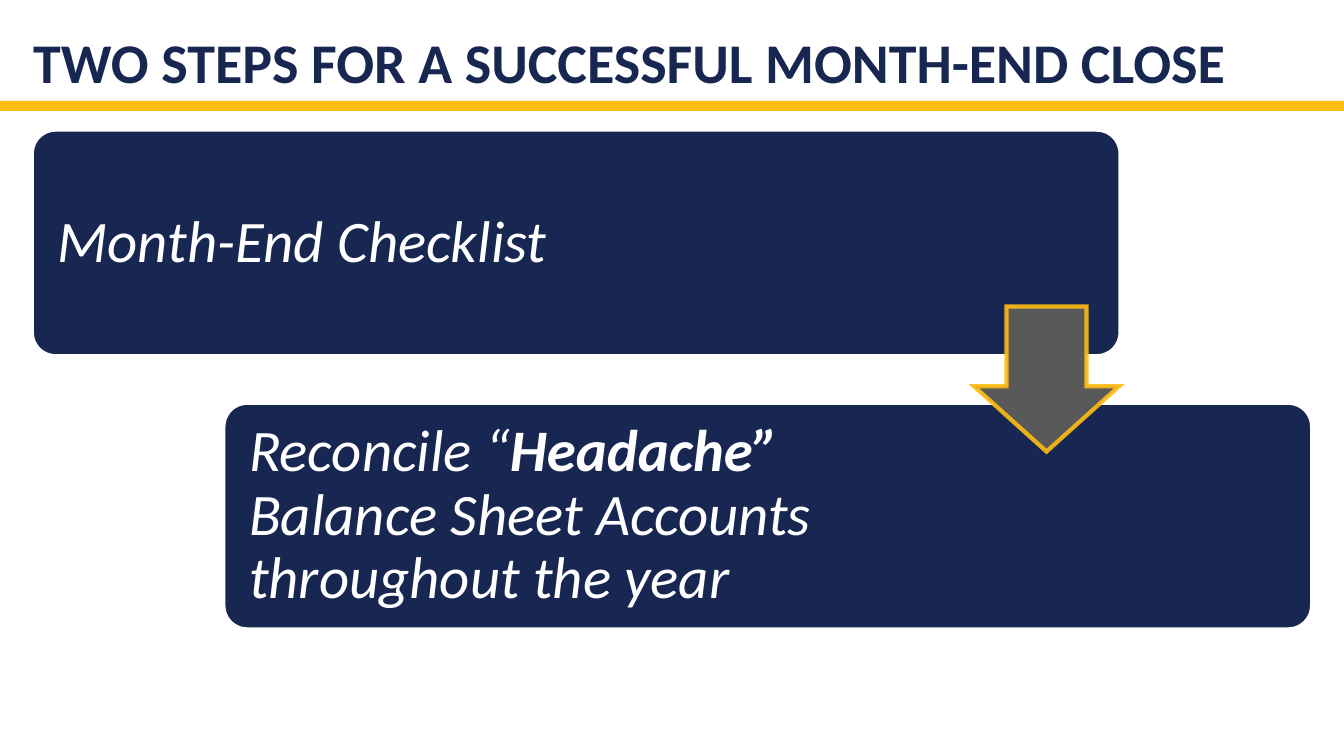
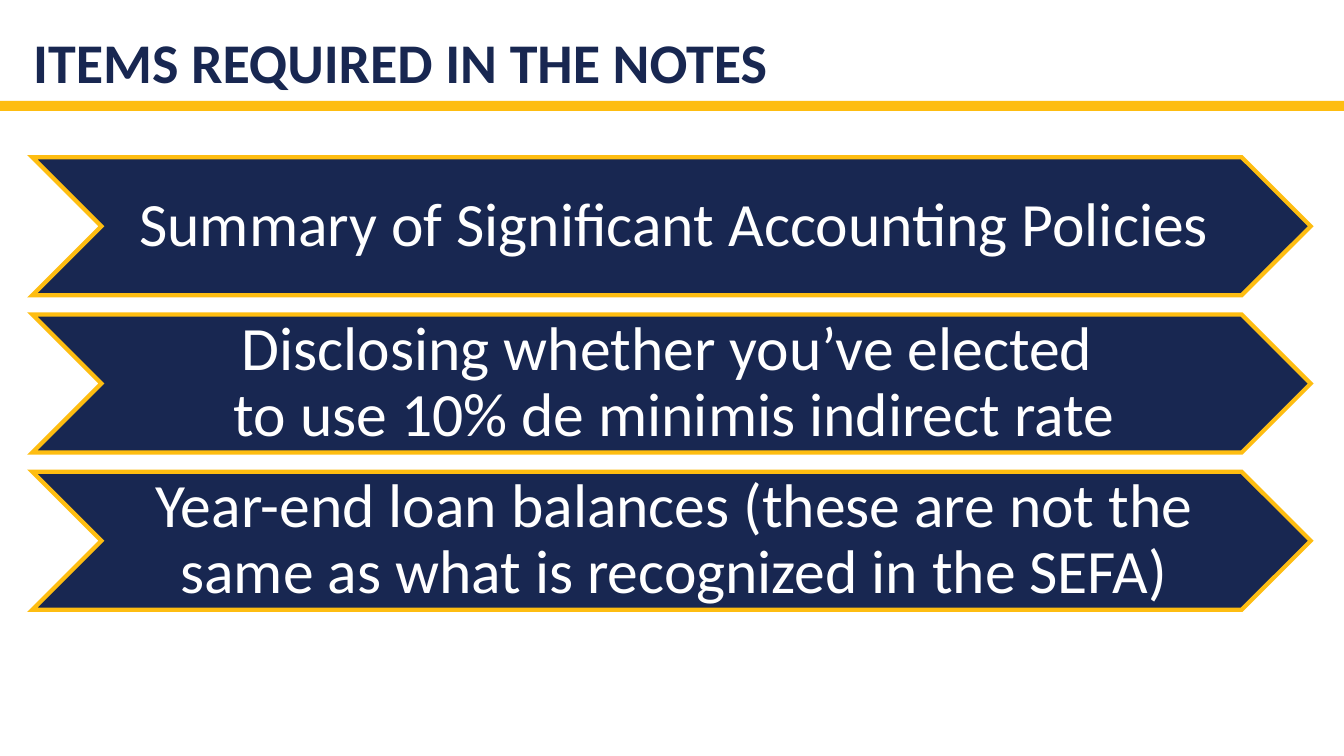
from dataclasses import dataclass

from lxml import etree
from pptx import Presentation
from pptx.dml.color import RGBColor
from pptx.enum import shapes, text
from pptx.oxml import ns
from pptx.util import Inches, Pt


@dataclass(frozen=True)
class Theme:
    navy: RGBColor = RGBColor.from_string("182751")
    gold: RGBColor = RGBColor.from_string("FEBD11")
    gray: RGBColor = RGBColor.from_string("595959")
    white: RGBColor = RGBColor.from_string("FFFFFF")
    font: str = "Calibri"
    title: int = 40
    step: int = 42
    item: int = 44


T = Theme()
SHAPE = shapes.MSO_SHAPE
ANCHOR = text.MSO_ANCHOR
ALIGN = text.PP_ALIGN
WIDTH, HEIGHT = 13.33, 7.5
MARGIN = 0.33

# Content: each step is a list of (words, bold) runs with its text width
STEPS_TITLE = "TWO STEPS FOR A SUCCESSFUL MONTH-END CLOSE"
STEPS = [
    ([("Month-End Checklist", False)], 8.48),
    ([("Reconcile “", False), ("Headache”", True),
      (" Balance Sheet Accounts throughout the year", False)], 7.3),
]
NOTES_TITLE = "ITEMS REQUIRED IN THE NOTES"
NOTES = [
    "Summary of Significant Accounting Policies",
    "Disclosing whether you’ve elected \vto use 10% de minimis indirect rate",
    "Year-end loan balances (these are not the same as what is recognized in the SEFA)",
]


# Shared parts
def add_block(s, kind, box, fill, line=None, weight=1, alpha=None):
    sp = s.shapes.add_shape(kind, *map(Inches, box))
    sp.shadow.inherit = False
    sp.fill.solid()
    sp.fill.fore_color.rgb = fill
    if line is None:
        sp.line.fill.background()
        return sp
    sp.line.color.rgb = line
    sp.line.width = Pt(weight)
    ln = sp.line._get_or_add_ln()
    if alpha:
        color = ln.find(".//" + ns.qn("a:srgbClr"))
        etree.SubElement(color, ns.qn("a:alpha"), val=str(alpha * 1000))
    etree.SubElement(ln, ns.qn("a:miter"), lim="800000")
    return sp


def add_text(s, box, runs, size, color, insets, anchor=ANCHOR.MIDDLE,
             align=ALIGN.LEFT, bold=None, italic=None):
    tf = s.shapes.add_textbox(*map(Inches, box)).text_frame
    tf.word_wrap = True
    tf.vertical_anchor = anchor
    (tf.margin_left, tf.margin_top,
     tf.margin_right, tf.margin_bottom) = map(Inches, insets)
    p = tf.paragraphs[0]
    p.alignment = align
    p.line_spacing = 0.9
    if isinstance(runs, str):
        p.text = runs
    else:
        for words, strong in runs:
            r = p.add_run()
            r.text = words
            r.font.bold = strong
    p.font.name = T.font
    p.font.size = Pt(size)
    p.font.color.rgb = color
    p.font.bold = bold
    p.font.italic = italic


def add_slide(prs, title):
    s = prs.slides.add_slide(prs.slide_layouts[6])
    add_block(s, SHAPE.RECTANGLE, (0, 1, WIDTH, 0.1), T.gold)
    add_text(s, (MARGIN, 0, WIDTH - 2 * MARGIN, 1), title, T.title, T.navy,
             (0, 0.05, 0, 0.05), anchor=ANCHOR.BOTTOM, bold=True)
    return s


# Slide 1: staggered steps joined by an arrow
def build_steps(prs):
    s = add_slide(prs, STEPS_TITLE)
    top, width, height = 1.3, 10.77, 2.22
    shift_x, shift_y, pad = 1.9, 2.71, 0.07
    for i, (runs, text_width) in enumerate(STEPS):
        x, y = MARGIN + i * shift_x, top + i * shift_y
        card = add_block(s, SHAPE.ROUNDED_RECTANGLE, (x, y, width, height),
                         T.navy, T.white)
        card.adjustments[0] = 0.1
        add_text(s, (x + pad, y + pad, text_width, height - 2 * pad), runs,
                 T.step, T.white, (0.17,) * 4, italic=True)
    side = 1.44
    arrow = add_block(s, SHAPE.DOWN_ARROW,
                      (MARGIN + width - side, 3.04, side, side),
                      T.gray, T.gold, 3, alpha=90)
    arrow.adjustments[0] = 0.55
    arrow.adjustments[1] = 0.45


# Slide 2: stacked chevrons
def build_notes(prs):
    s = add_slide(prs, NOTES_TITLE)
    left, top, width, height, pitch = 0.32, 1.56, 12.68, 1.37, 1.56
    notch = height / 2
    for i, note in enumerate(NOTES):
        y = top + i * pitch
        add_block(s, SHAPE.CHEVRON, (left, y, width, height), T.navy, T.gold, 3)
        add_text(s, (left + notch, y, width - 2 * notch, height), note,
                 T.item, T.white, (0.06, 0.03, 0, 0.03), align=ALIGN.CENTER)


def main():
    prs = Presentation()
    prs.slide_width, prs.slide_height = Inches(WIDTH), Inches(HEIGHT)
    build_steps(prs)
    build_notes(prs)
    prs.save("out.pptx")


if __name__ == "__main__":
    main()
